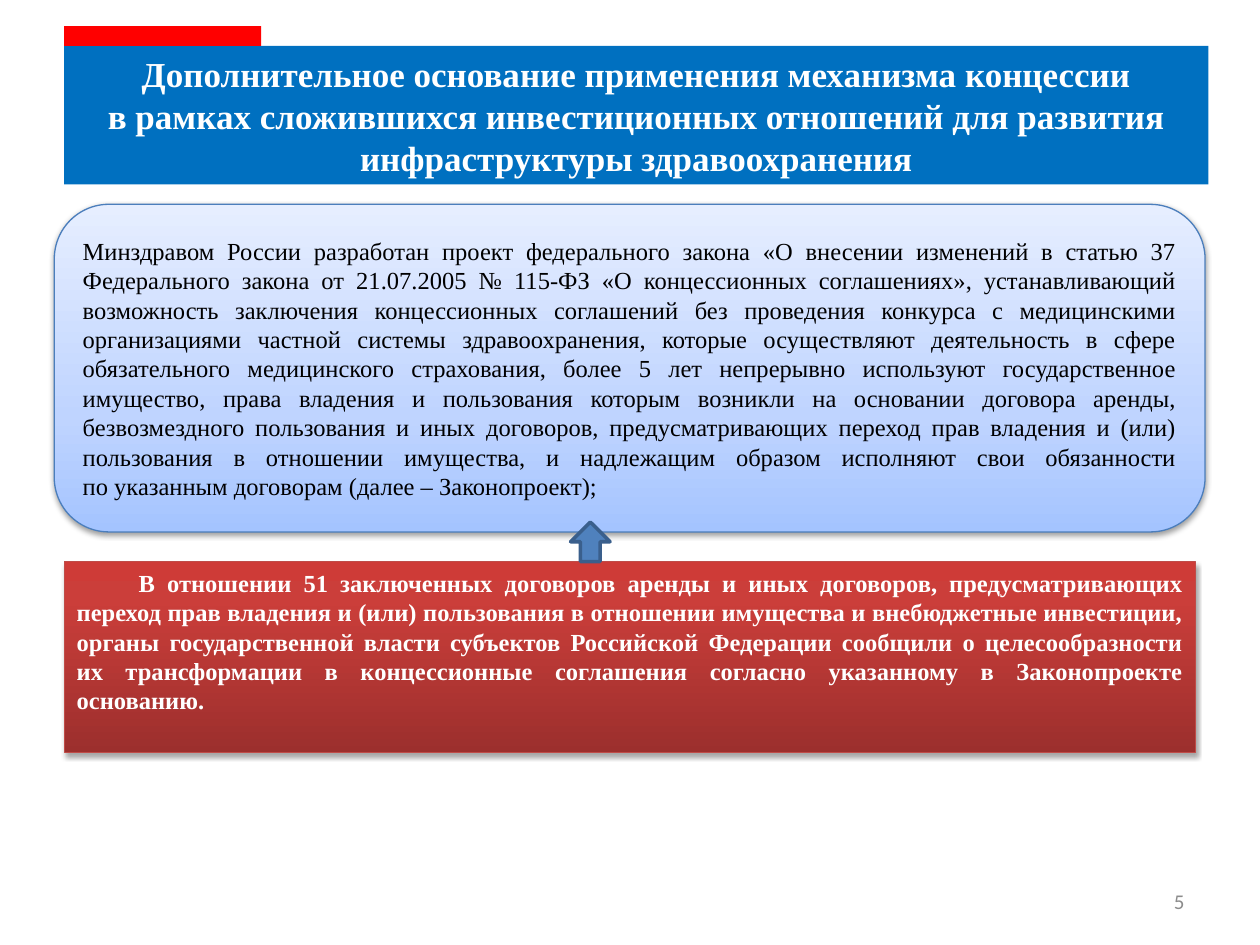
from lxml import etree
from pptx import Presentation
from pptx.dml.color import RGBColor
from pptx.enum import shapes, text
from pptx.oxml import ns
from pptx.util import Pt

# Content
HEAD = ("Дополнительное основание применения механизма концессии\v"
        "в рамках сложившихся инвестиционных отношений для развития "
        "инфраструктуры здравоохранения")
LAW = ("Минздравом России разработан проект федерального закона «О внесении "
       "изменений в статью 37 Федерального закона от 21.07.2005 № 115-ФЗ "
       "«О концессионных соглашениях», устанавливающий возможность заключения "
       "концессионных соглашений без проведения конкурса с медицинскими "
       "организациями частной системы здравоохранения, которые осуществляют "
       "деятельность в сфере обязательного медицинского страхования, более 5 лет "
       "непрерывно используют государственное имущество, права владения и "
       "пользования которым возникли на основании договора аренды, "
       "безвозмездного пользования и иных договоров, предусматривающих переход "
       "прав владения и (или) пользования в отношении имущества, и надлежащим "
       "образом исполняют свои обязанности\v"
       "по указанным договорам (далее – Законопроект);")
DEALS = ("В отношении 51 заключенных договоров аренды и иных договоров, "
         "предусматривающих переход прав владения и (или) пользования в отношении "
         "имущества и внебюджетные инвестиции, органы государственной власти "
         "субъектов Российской Федерации сообщили о целесообразности их "
         "трансформации в концессионные соглашения согласно указанному в "
         "Законопроекте основанию.")
PAGE = "5"

THEME = {
    "serif": "Times New Roman", "sans": "Calibri",
    "head": 20, "body": 14, "page": 12,
    "white": "FFFFFF", "black": "000000", "grey": "8C8C8C",
    "red": "FF0000", "blue": "0070C0",
    "arrow": "4F81BD", "edge": "3A5F8C",
    "law": [(0, "A4C4FF"), (35, "BFD4FF"), (100, "E6EEFF")], "lawline": "4B7EBC",
    "deals": [(0, "9C2F2D"), (80, "CB3E3A"), (100, "CE3B37")], "dealsline": "BF4C48",
}

# Places: left, top, width, height in points
LEFT = 36.7
AT = {
    "bar": (LEFT, 15, 112.5, 11.3),
    "head": (LEFT, 26.2, 653.8, 79.2),
    "law": (31, 116.8, 657.6, 187.2),
    "deals": (LEFT, 320.9, 646.6, 109),
    "arrow": (326, 298.3, 22.6, 22.6),
    "page": (516, 500.4, 168, 28.8),
}

KIND = shapes.MSO_SHAPE
ALIGN = text.PP_ALIGN
ANCHOR = text.MSO_ANCHOR


def color(name):
    return RGBColor.from_string(THEME[name])


def place(shape, name):
    for key, val in zip(("left", "top", "width", "height"), AT[name]):
        setattr(shape, key, Pt(val))


def paint(shape, fill):
    shape.fill.solid()
    shape.fill.fore_color.rgb = color(fill)


def edge(shape, name, width):
    shape.line.color.rgb = color(name)
    shape.line.width = Pt(width)


def draw(kind, name):
    shape = slide.shapes.add_shape(kind, *map(Pt, AT[name]))
    shape.shadow.inherit = False
    return shape


def write(shape, words, tone, size, align, anchor, bold=False, face="serif", indent=0):
    frame = shape.text_frame
    frame.text = words
    for key, val in {"word_wrap": True, "vertical_anchor": anchor,
                     "auto_size": text.MSO_AUTO_SIZE.NONE}.items():
        setattr(frame, key, val)
    para = frame.paragraphs[0]
    para.alignment = align
    if indent:
        para._p.get_or_add_pPr().set("indent", str(Pt(indent)))
    for run in para.runs:
        for key, val in {"name": THEME[face], "size": Pt(THEME[size]),
                         "bold": bold}.items():
            setattr(run.font, key, val)
        run.font.color.rgb = color(tone)


def add(parent, tag, **attrs):
    return etree.SubElement(parent, ns.qn("a:" + tag),
                            {key: str(val) for key, val in attrs.items()})


def shade(shape, name):
    """Gradient running upwards, first stop at the bottom."""
    shape.fill.gradient()
    shape.fill.gradient_angle = 90
    stops = shape._element.spPr.find(".//" + ns.qn("a:gsLst"))
    for old in list(stops):
        stops.remove(old)
    for pos, tone in THEME[name]:
        add(add(stops, "gs", pos=pos * 1000), "srgbClr", val=tone)


def drop(shape, alpha, dist):
    """Soft shadow straight below."""
    effects = shape._element.spPr.find(ns.qn("a:effectLst"))
    outer = add(effects, "outerShdw", blurRad=Pt(3.1), dist=Pt(dist),
                dir=5400000, rotWithShape=0)
    add(add(outer, "srgbClr", val=THEME["black"]), "alpha", val=alpha * 1000)


deck = Presentation()
deck.slide_width, deck.slide_height = Pt(720), Pt(540)
slide = deck.slides.add_slide(deck.slide_layouts[5])

# Title band with its red tab
title = slide.shapes.title
place(title, "head")
paint(title, "blue")
write(title, HEAD, "white", "head", ALIGN.CENTER, ANCHOR.MIDDLE, bold=True)
bar = draw(KIND.RECTANGLE, "bar")
paint(bar, "red")
bar.line.fill.background()

# Text panels: name, kind, words, shadow, text format
PANELS = [
    ("deals", KIND.RECTANGLE, DEALS, (35, 1.8),
     {"tone": "white", "anchor": ANCHOR.TOP, "bold": True, "indent": 35.4}),
    ("law", KIND.ROUNDED_RECTANGLE, LAW, (38, 1.6),
     {"tone": "black", "anchor": ANCHOR.MIDDLE}),
]
for name, kind, words, cast, style in PANELS:
    panel = draw(kind, name)
    shade(panel, name)
    edge(panel, name + "line", 0.75)
    drop(panel, *cast)
    write(panel, words, size="body", align=ALIGN.JUSTIFY, **style)

# Arrow from the lower panel to the upper one
arrow = draw(KIND.UP_ARROW, "arrow")
paint(arrow, "arrow")
edge(arrow, "edge", 2)

# Page number
page = slide.shapes.add_textbox(*map(Pt, AT["page"]))
write(page, PAGE, "grey", "page", ALIGN.RIGHT, ANCHOR.MIDDLE, face="sans")

deck.save("out.pptx")
